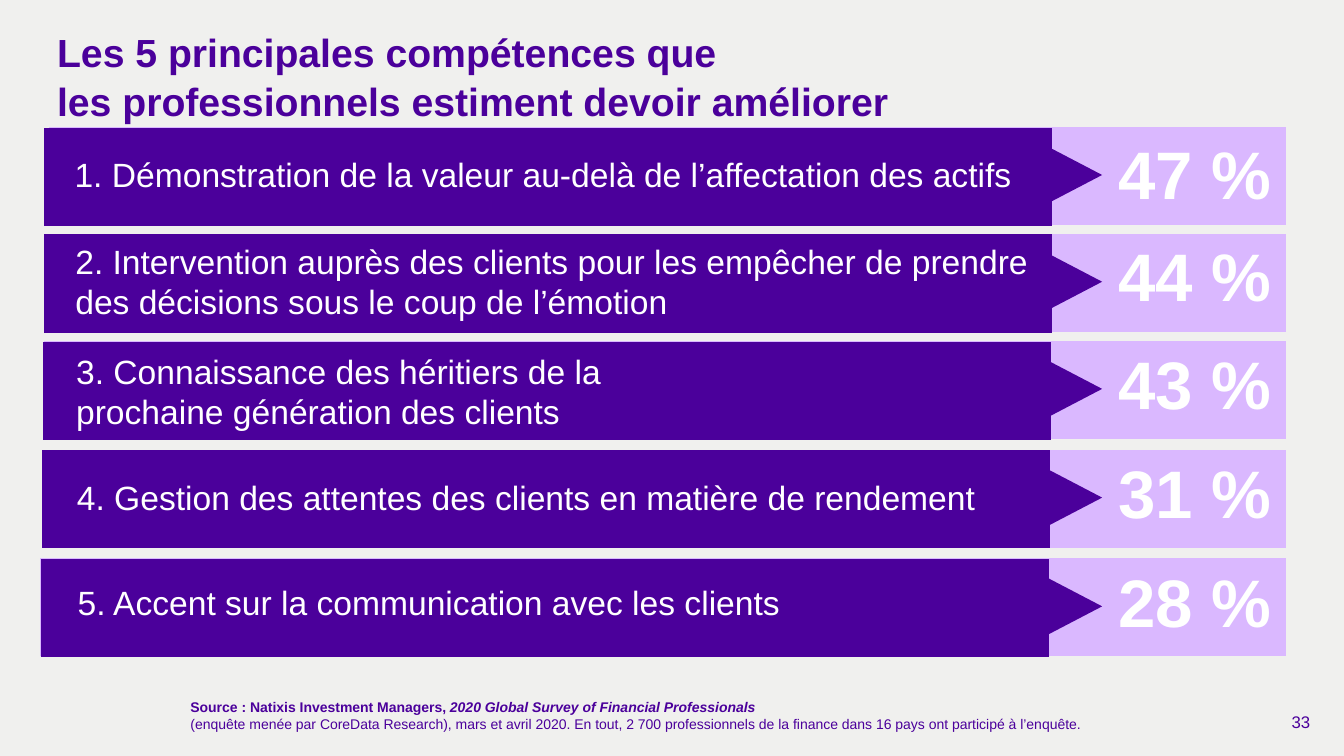
"""Build the slide ranking the five skills that professionals want to improve."""
from dataclasses import dataclass

from pptx import Presentation
from pptx.dml.color import RGBColor
from pptx.enum.shapes import MSO_AUTO_SHAPE_TYPE as ShapeType
from pptx.enum.text import MSO_ANCHOR as Anchor, PP_ALIGN as Align
from pptx.shapes.autoshape import Shape
from pptx.slide import Slide
from pptx.text.text import Font
from pptx.util import Cm, Pt

PURPLE = "4B009B"
LILAC = "DAB8FF"
WHITE = "FFFFFF"
BACKGROUND = "F0F0EE"
BAR_HEIGHT = 2.47
BAR_RIGHT = 32.41


@dataclass
class Box:
    left: float
    top: float
    width: float
    height: float


@dataclass
class Skill:
    label: str
    share: str
    bar_top: float
    share_top: float
    label_top: float
    label_width: float = 30.2
    label_height: float = 1.27


SKILLS = [
    Skill("1. Démonstration de la valeur au-delà de l’affectation des actifs",
          "47 %", 3.2, 3.2, 3.76),
    Skill("2. Intervention auprès des clients pour les empêcher de prendre "
          "des décisions sous le coup de l’émotion",
          "44 %", 5.89, 5.79, 5.94, 24.51, 2.31),
    Skill("3. Connaissance des héritiers de la prochaine génération des clients",
          "43 %", 8.59, 8.51, 8.71, 16.51, 2.31),
    Skill("4. Gestion des attentes des clients en matière de rendement",
          "31 %", 11.33, 11.25, 11.89),
    Skill("5. Accent sur la communication avec les clients",
          "28 %", 14.07, 14.0, 14.55),
]


def color(value: str) -> RGBColor:
    return RGBColor.from_string(value)


def set_font(font: Font, size: float, fill: str, bold: bool | None = False) -> None:
    font.name = "Arial"
    font.size = Pt(size)
    font.color.rgb = color(fill)
    font.bold = bold


def add_block(slide: Slide, kind: ShapeType, box: Box, fill: str) -> Shape:
    shape = slide.shapes.add_shape(
        kind, Cm(box.left), Cm(box.top), Cm(box.width), Cm(box.height))
    shape.shadow.inherit = False
    shape.fill.solid()
    shape.fill.fore_color.rgb = color(fill)
    shape.line.fill.background()
    return shape


def add_text(slide: Slide, text: str, box: Box, size: float, fill: str,
             bold: bool | None = False, align: Align = Align.LEFT) -> Shape:
    shape = slide.shapes.add_textbox(
        Cm(box.left), Cm(box.top), Cm(box.width), Cm(box.height))
    shape.text_frame.word_wrap = True
    paragraph = shape.text_frame.paragraphs[0]
    paragraph.text = text
    paragraph.alignment = align
    set_font(paragraph.font, size, fill, bold)
    return shape


def add_skill(slide: Slide, index: int, skill: Skill) -> None:
    share_left = 1.24 - 0.06 * index
    add_block(slide, ShapeType.FLOWCHART_PROCESS,
              Box(share_left, skill.bar_top, BAR_RIGHT - share_left, BAR_HEIGHT), LILAC)
    arrow = add_block(slide, ShapeType.ISOSCELES_TRIANGLE,
                      Box(26.16, skill.bar_top + 0.42, 1.65, 1.58), PURPLE)
    arrow.rotation = 90
    add_block(slide, ShapeType.FLOWCHART_PROCESS,
              Box(1.12 - 0.02 * index, skill.bar_top + 0.02, 25.4, BAR_HEIGHT), PURPLE)
    add_text(slide, skill.share, Box(27.18, skill.share_top, 5.87, 2.31),
             48, WHITE, True, Align.CENTER)
    add_text(slide, skill.label,
             Box(1.63 + 0.02 * index, skill.label_top, skill.label_width, skill.label_height),
             24, WHITE)


def add_source(slide: Slide) -> None:
    shape = add_text(slide, "", Box(4.55, 17.48, 26.57, 1.12), 10, PURPLE, None)
    paragraph = shape.text_frame.paragraphs[0]
    publisher = paragraph.add_run()
    publisher.text = "Source : Natixis Investment Managers, "
    publisher.font.bold = True
    survey = paragraph.add_run()
    survey.text = "2020 Global Survey of Financial Professionals"
    survey.font.bold = True
    survey.font.italic = True
    paragraph.add_line_break()
    details = paragraph.add_run()
    details.text = (
        "(enquête menée par CoreData Research), mars et avril 2020. En tout, "
        "2 700 professionnels de la finance dans 16 pays ont participé à l’enquête.")


def add_page_number(slide: Slide) -> None:
    shape = add_text(slide, "33", Box(30.68, 17.91, 2.59, 0.64), 12, PURPLE,
                     align=Align.RIGHT)
    frame = shape.text_frame
    frame.margin_left = frame.margin_top = frame.margin_bottom = 0
    frame.vertical_anchor = Anchor.MIDDLE
    frame.paragraphs[0].line_spacing = 0.9


def main() -> None:
    presentation = Presentation()
    presentation.slide_width = Cm(33.87)
    presentation.slide_height = Cm(19.05)
    slide = presentation.slides.add_slide(presentation.slide_layouts[6])
    slide.background.fill.solid()
    slide.background.fill.fore_color.rgb = color(BACKGROUND)

    title = add_text(
        slide,
        "Les 5 principales compétences que\vles professionnels estiment devoir améliorer",
        Box(1.19, 0.54, 30.1, 2.6), 28, PURPLE, True)
    title.text_frame.paragraphs[0].line_spacing = 1.04
    for index, skill in enumerate(SKILLS):
        add_skill(slide, index, skill)
    add_source(slide)
    add_page_number(slide)
    presentation.save("out.pptx")


if __name__ == "__main__":
    main()
